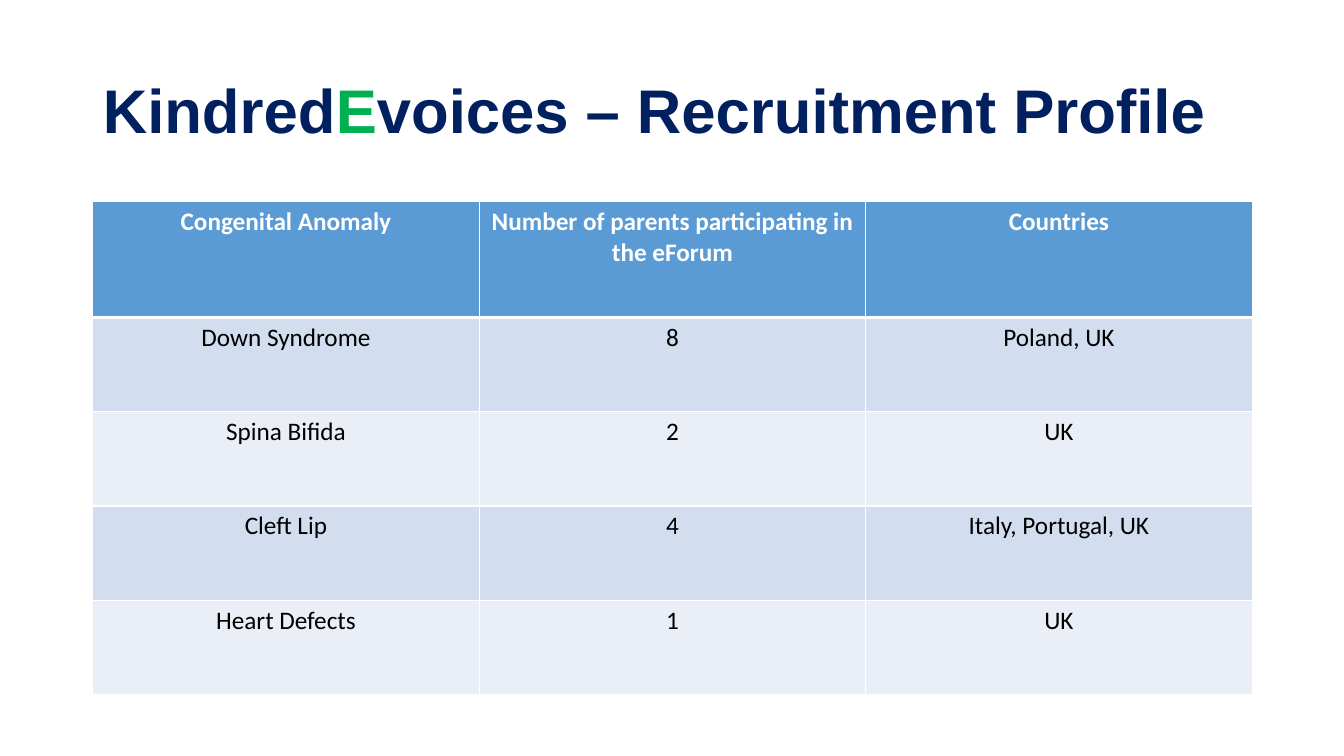
import pptx
import pptx.util
import pptx.dml.color
import pptx.enum.text
import pptx.oxml
import pptx.oxml.ns
from dataclasses import dataclass
from pptx.util import Inches


@dataclass(frozen=True)
class Theme:
    title_font: str = "Arial"
    table_font: str = "Calibri"
    title_size: int = 44
    table_size: int = 18
    navy: str = "002060"
    green: str = "00B050"
    white: str = "FFFFFF"
    black: str = "000000"
    header_fill: str = "5B9BD5"
    band_fills: tuple = ("D2DEEF", "EAEFF7")
    grid_width: float = 1
    header_rule_width: float = 3


class SlideBuilder:
    def __init__(self, deck, theme):
        self.theme = theme
        self.page = deck.slides.add_slide(deck.slide_layouts[5])

    def add_span(self, para, text, font, size, color, bold):
        span = para.add_run()
        span.text = text
        span.font.name = font
        span.font.size = pptx.util.Pt(size)
        span.font.bold = bold
        span.font.color.rgb = pptx.dml.color.RGBColor.from_string(color)

    def add_title(self, parts, left, top, width, height):
        """Fill the title placeholder from (text, colour) pairs."""
        box = self.page.shapes.title
        box.left, box.top = Inches(left), Inches(top)
        box.width, box.height = Inches(width), Inches(height)
        frame = box.text_frame
        frame.word_wrap = True
        frame.auto_size = pptx.enum.text.MSO_AUTO_SIZE.NONE
        frame.vertical_anchor = pptx.enum.text.MSO_ANCHOR.MIDDLE
        para = frame.paragraphs[0]
        para.alignment = pptx.enum.text.PP_ALIGN.LEFT
        para.line_spacing = 0.9
        for text, color in parts:
            self.add_span(para, text, self.theme.title_font,
                          self.theme.title_size, color, True)

    def set_borders(self, cell, widths):
        """Draw white cell edges; widths maps an edge tag to points."""
        properties = cell._tc.get_or_add_tcPr()
        for position, (edge, width) in enumerate(widths.items()):
            line = pptx.oxml.parse_xml(
                f'<a:{edge} {pptx.oxml.ns.nsdecls("a")} w="{pptx.util.Pt(width)}">'
                f'<a:solidFill><a:srgbClr val="{self.theme.white}"/></a:solidFill>'
                f'</a:{edge}>')
            properties.insert(position, line)

    def style_cell(self, cell, text, row):
        theme = self.theme
        header = row == 0
        fill = theme.header_fill if header else theme.band_fills[(row - 1) % 2]
        cell.fill.solid()
        cell.fill.fore_color.rgb = pptx.dml.color.RGBColor.from_string(fill)
        para = cell.text_frame.paragraphs[0]
        para.alignment = pptx.enum.text.PP_ALIGN.CENTER
        self.add_span(para, text, theme.table_font, theme.table_size,
                      theme.white if header else theme.black, header)
        widths = dict.fromkeys(("lnL", "lnR", "lnT", "lnB"), theme.grid_width)
        if header:
            widths["lnB"] = theme.header_rule_width
        elif row == 1:
            widths["lnT"] = theme.header_rule_width
        self.set_borders(cell, widths)

    def add_table(self, rows, left, top, width, header_height, row_height):
        height = header_height + row_height * (len(rows) - 1)
        table = self.page.shapes.add_table(
            len(rows), len(rows[0]), Inches(left), Inches(top),
            Inches(width), Inches(height)).table
        for row, texts in enumerate(rows):
            table.rows[row].height = Inches(row_height if row else header_height)
            for column, text in enumerate(texts):
                self.style_cell(table.cell(row, column), text, row)


RECRUITMENT = [
    ("Congenital Anomaly", "Number of parents participating in the eForum", "Countries"),
    ("Down Syndrome", "8", "Poland, UK"),
    ("Spina Bifida", "2", "UK"),
    ("Cleft Lip", "4", "Italy, Portugal, UK"),
    ("Heart Defects", "1", "UK"),
]


def main():
    deck = pptx.Presentation()
    deck.slide_width, deck.slide_height = Inches(13.33), Inches(7.5)
    theme = Theme()
    slide = SlideBuilder(deck, theme)
    left, width = 0.92, 11.5
    slide.add_title([("Kindred", theme.navy), ("E", theme.green),
                     ("voices – Recruitment Profile", theme.navy)],
                    left, 0.4, width, 1.45)
    slide.add_table(RECRUITMENT, left, 2, width, header_height=1.15, row_height=0.935)
    deck.save("out.pptx")


if __name__ == "__main__":
    main()
